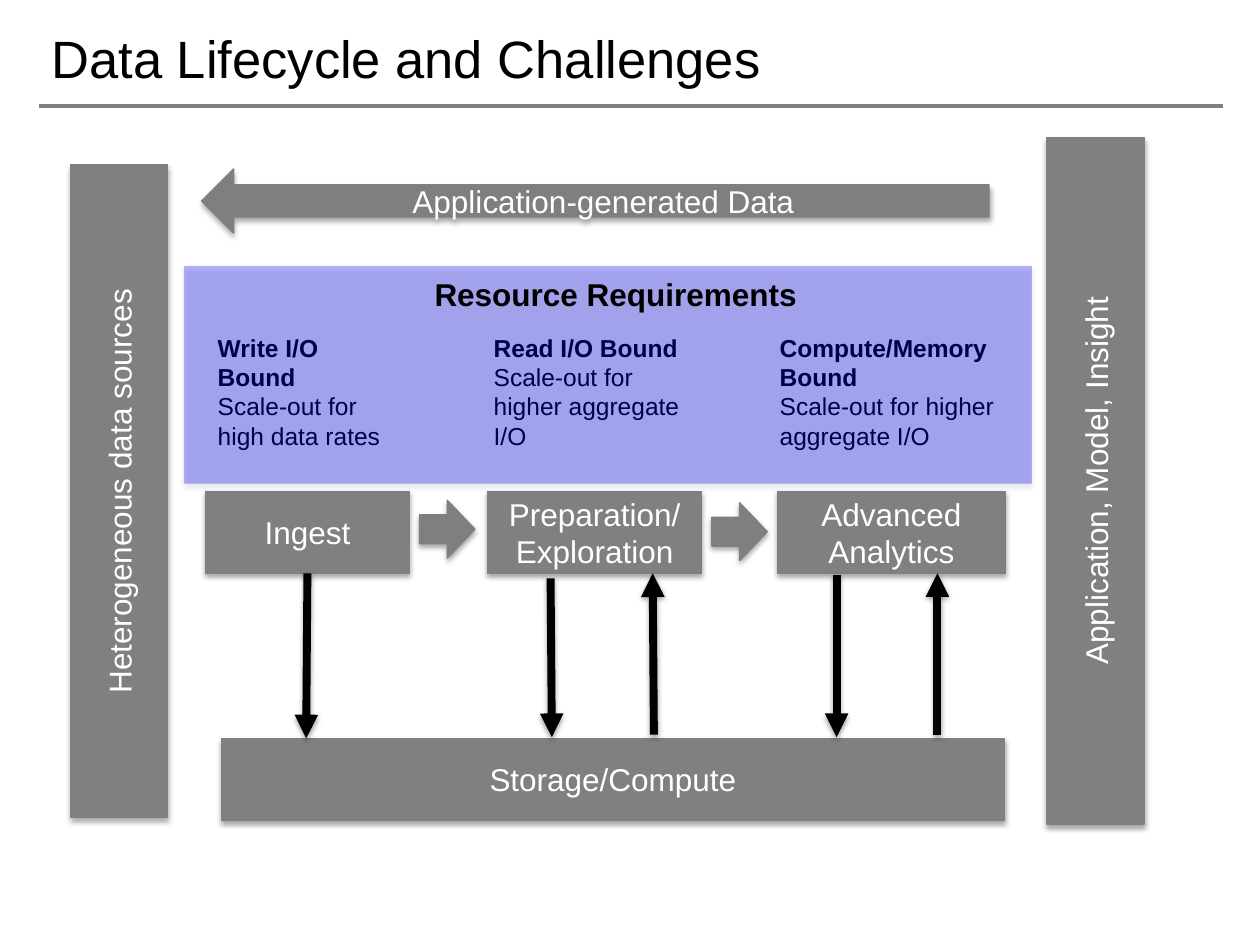
from lxml.etree import SubElement
from pptx import Presentation
from pptx.dml.color import RGBColor
from pptx.enum.shapes import MSO_CONNECTOR, MSO_SHAPE
from pptx.enum.text import MSO_ANCHOR, MSO_AUTO_SIZE, PP_ALIGN
from pptx.oxml.ns import qn
from pptx.util import Inches, Pt

COLORS = {"gray": "808080", "arrow": "7F7F7F", "black": "000000",
          "white": "FFFFFF", "panel": "0000FF"}
FONT = "Arial"


def rgb(name):
    """Return the named colour."""
    return RGBColor.from_string(COLORS[name])


def add_run(paragraph, text, size, color, bold=False):
    """Add one formatted run to a paragraph."""
    run = paragraph.add_run()
    run.text = text
    run.font.name = FONT
    run.font.size = Pt(size)
    run.font.bold = bold
    run.font.color.rgb = rgb(color)


def add_alpha(color_element, percent):
    """Set the opacity of a colour element."""
    SubElement(color_element, qn("a:alpha"), val=str(percent * 1000))


def cast_shadow(effects, distance, opacity):
    """Put a soft downward shadow in an effect list."""
    shadow = SubElement(effects, qn("a:outerShdw"), blurRad=str(Pt(3.1)),
                        dist=str(Pt(distance)), dir="5400000", rotWithShape="0")
    add_alpha(SubElement(shadow, qn("a:srgbClr"), val=COLORS["black"]), opacity)


def add_block(slide, box, kind=MSO_SHAPE.RECTANGLE, label="", fill="gray",
              line="gray", vertical=False):
    """Add a filled, shadowed block with an optional centred label."""
    block = slide.shapes.add_shape(kind, *map(Inches, box))
    block.fill.solid()
    block.fill.fore_color.rgb = rgb(fill)
    if line:
        block.line.color.rgb = rgb(line)
        block.line.width = Pt(0.75)
    else:
        block.line.fill.background()
    block.shadow.inherit = False
    cast_shadow(block.element.spPr.find(qn("a:effectLst")), 1.8, 35)
    if label:
        frame = block.text_frame
        frame.word_wrap = True
        frame.vertical_anchor = MSO_ANCHOR.MIDDLE
        frame.paragraphs[0].alignment = PP_ALIGN.CENTER
        add_run(frame.paragraphs[0], label, 18, "white")
        if vertical:
            block.element.txBody.find(qn("a:bodyPr")).set("vert", "vert270")
    return block


def add_line(slide, start, end, color, width):
    """Add a straight line without the theme shadow and return it with its effects."""
    line = slide.shapes.add_connector(
        MSO_CONNECTOR.STRAIGHT, *map(Inches, (*start, *end)))
    line.line.color.rgb = rgb(color)
    line.line.width = Pt(width)
    return line, SubElement(line.element.spPr, qn("a:effectLst"))


def add_flow(slide, start, end):
    """Add a heavy arrow between a stage and storage."""
    flow, effects = add_line(slide, start, end, "black", 4.5)
    SubElement(flow.element.spPr.find(qn("a:ln")), qn("a:tailEnd"), type="triangle")
    cast_shadow(effects, 1.6, 38)


def add_title(slide, box):
    """Place the title and the rule below it."""
    left, top, width, height = box
    title = slide.shapes.title
    title.left, title.top, title.width, title.height = map(Inches, box)
    frame = title.text_frame
    frame.auto_size = MSO_AUTO_SIZE.NONE
    frame.vertical_anchor = MSO_ANCHOR.MIDDLE
    frame.paragraphs[0].alignment = PP_ALIGN.LEFT
    add_run(frame.paragraphs[0], "Data Lifecycle and Challenges", 30, "black")
    rule = top + height + 0.01
    add_line(slide, (left, rule), (left + width, rule), "gray", 2)


def add_pipeline(slide, box):
    """Place the stages, the arrows between them, storage and its flows."""
    left, top, width, height = box
    row = 0.65
    stages = [(0, 1.62, "Ingest"), (2.24, 1.7, "Preparation/Exploration"),
              (4.54, 1.81, "Advanced Analytics")]
    for offset, stage_width, label in stages:
        add_block(slide, (left + offset, top, stage_width, row), label=label)
    for offset, drop in [(1.7, 0.07), (4.02, 0.09)]:
        add_block(slide, (left + offset, top + drop, 0.44, 0.46),
                  MSO_SHAPE.RIGHT_ARROW, fill="arrow", line="arrow")
    storage = top + height - row
    add_block(slide, (left + 0.13, storage, width - 0.14, row),
              label="Storage/Compute")
    flows = [((2.44, 4.55), (2.43, 5.86)), ((4.37, 4.59), (4.38, 5.85)),
             ((5.19, 5.83), (5.18, 4.55)), ((6.64, 4.56), (6.64, 5.85)),
             ((7.44, 5.83), (7.44, 4.55))]
    for start, end in flows:
        add_flow(slide, start, end)


def add_requirements(slide, box):
    """Place the requirement columns under a translucent panel with a heading."""
    left, top, width, height = box
    columns = [(0.17, 1.6, "Write I/O Bound", "Scale-out for high data rates"),
               (2.36, 1.76, "Read I/O Bound", "Scale-out for higher aggregate I/O"),
               (4.63, 1.94, "Compute/Memory Bound",
                "Scale-out for higher aggregate I/O")]
    for offset, column_width, bound, remedy in columns:
        column = slide.shapes.add_textbox(
            *map(Inches, (left + offset, top + 0.48, column_width, 1.04)))
        frame = column.text_frame
        frame.word_wrap = True
        frame.auto_size = MSO_AUTO_SIZE.SHAPE_TO_FIT_TEXT
        add_run(frame.paragraphs[0], bound, 14, "black", bold=True)
        add_run(frame.add_paragraph(), remedy, 14, "black")
    panel = add_block(slide, box, fill="panel", line=None)
    fill = panel.element.spPr.find(qn("a:solidFill"))
    add_alpha(fill.find(qn("a:srgbClr")), 29)
    heading = slide.shapes.add_textbox(
        *map(Inches, (left + 1.89, top + 0.02, 3.11, 0.4)))
    heading.text_frame.word_wrap = False
    heading.text_frame.auto_size = MSO_AUTO_SIZE.SHAPE_TO_FIT_TEXT
    add_run(heading.text_frame.paragraphs[0], "Resource Requirements", 18,
            "black", bold=True)


def main():
    """Build and save the slide."""
    deck = Presentation()
    deck.slide_width, deck.slide_height = Inches(10), Inches(7.5)
    slide = deck.slides.add_slide(deck.slide_layouts[5])
    add_title(slide, (0.31, 0.08, 9.4, 0.75))
    add_block(slide, (0.56, 1.31, 0.77, 5.18),
              label="Heterogeneous data sources", vertical=True)
    add_block(slide, (8.31, 1.09, 0.77, 5.45),
              label="Application, Model, Insight", vertical=True)
    add_pipeline(slide, (1.63, 3.9, 6.35, 2.61))
    add_block(slide, (1.6, 1.34, 6.25, 0.51), MSO_SHAPE.LEFT_ARROW,
              "Application-generated Data", fill="arrow")
    add_requirements(slide, (1.46, 2.11, 6.73, 1.73))
    deck.save("out.pptx")


if __name__ == "__main__":
    main()
